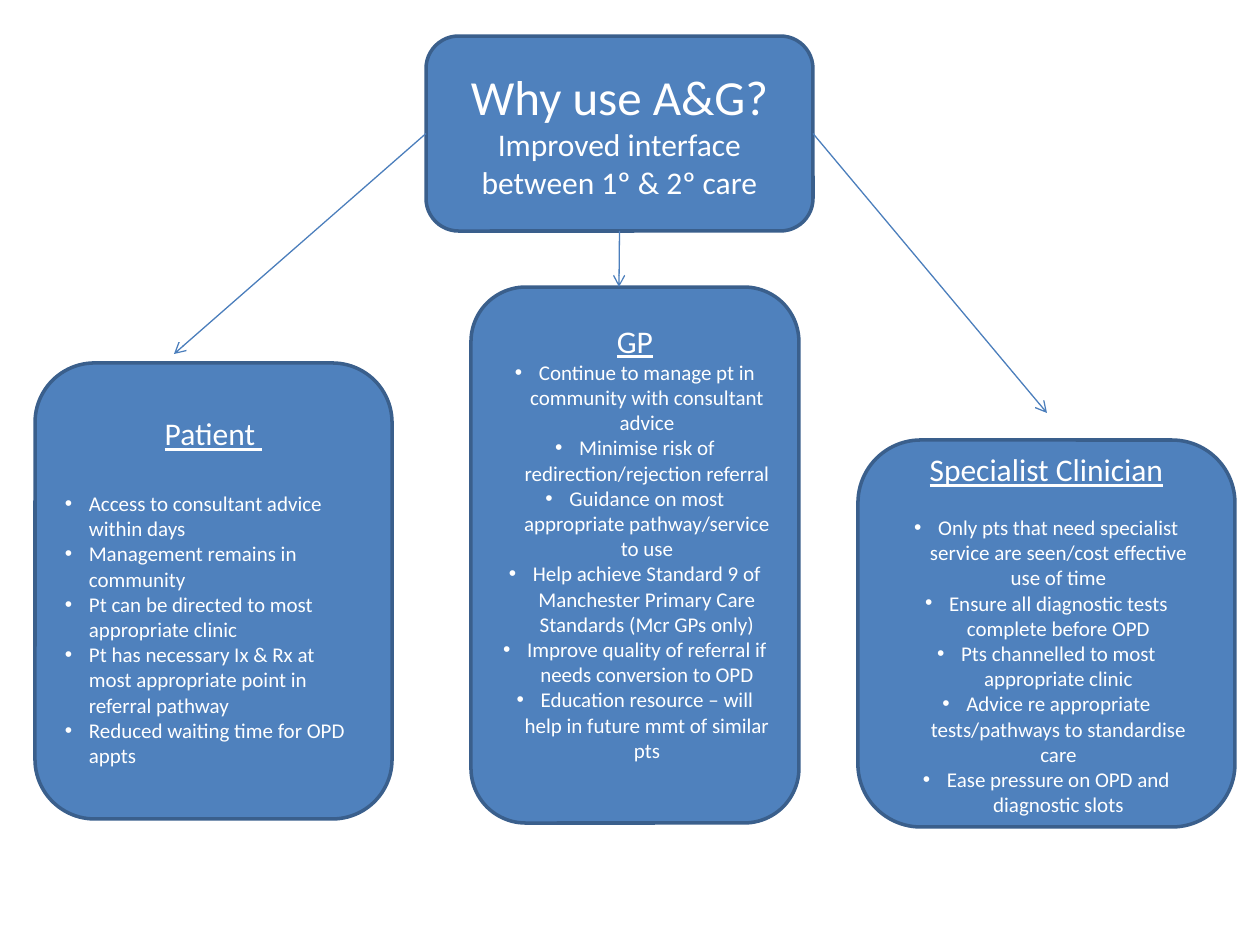
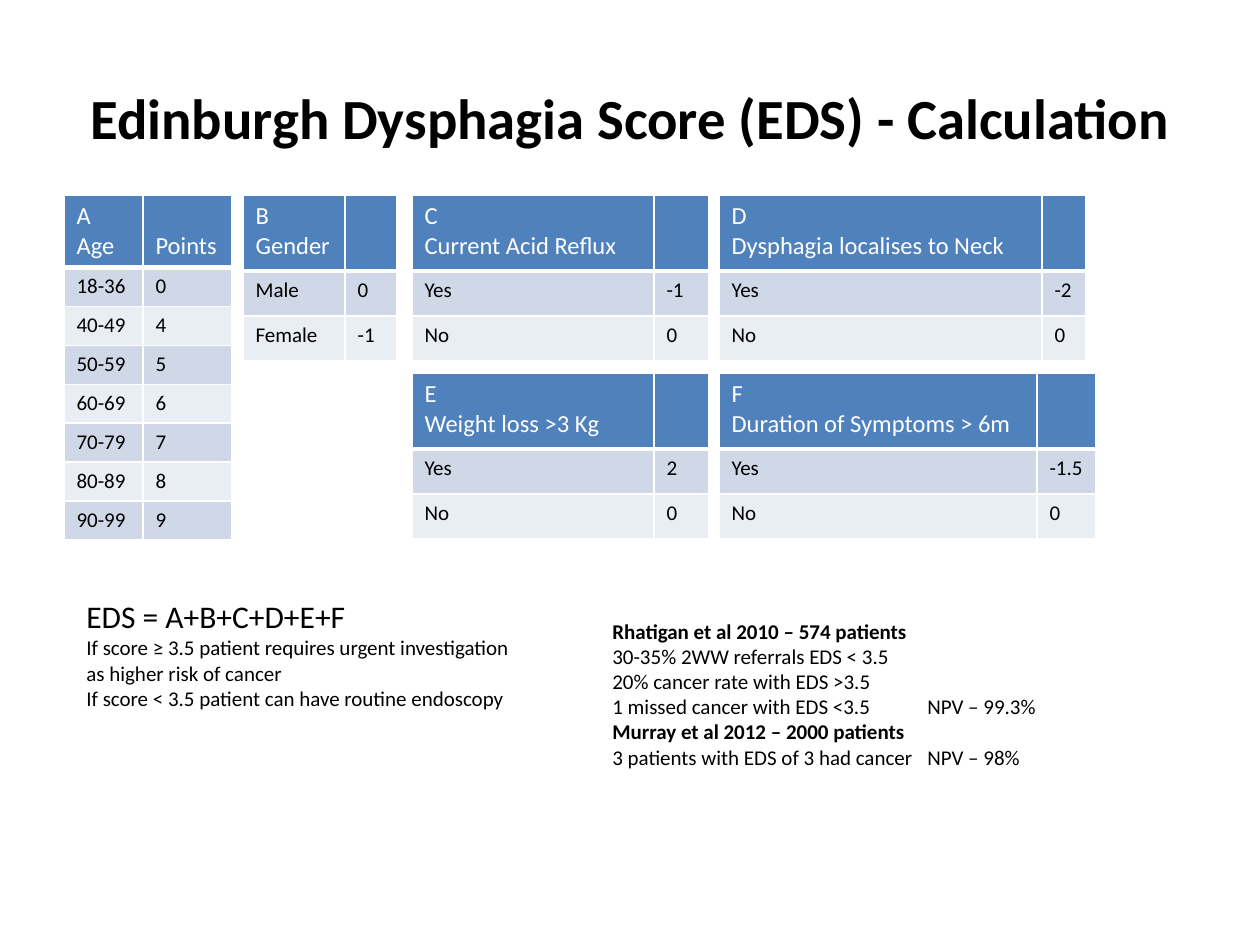
from pptx import Presentation
from pptx.dml.color import RGBColor
from pptx.enum.shapes import MSO_CONNECTOR as Connector, MSO_SHAPE as Shape
from pptx.enum.text import MSO_ANCHOR as Anchor, MSO_AUTO_SIZE as AutoSize, PP_ALIGN as Align
from pptx.oxml.ns import qn
from pptx.util import Emu, Pt
from lxml.etree import SubElement

FONT = "Calibri"
BLUE = RGBColor(0x4F, 0x81, 0xBD)
BOX_EDGE = RGBColor(0x3A, 0x5F, 0x8C)
ARROW_BLUE = RGBColor(0x4B, 0x7E, 0xBC)
BAND_DARK = RGBColor(0xD0, 0xD8, 0xE8)
BAND_LIGHT = RGBColor(0xE9, 0xED, 0xF4)
WHITE = RGBColor(0xFF, 0xFF, 0xFF)
BLACK = RGBColor(0, 0, 0)

PX_PER_INCH = 126
BULLET_INDENT = 24
INSET = 6
TITLE_BOX = (63, 38, 1134, 158)

# Reasons: box, heading, gap after heading (pt), alignment, extra bottom inset, bullets
REASONS = [
    ((35, 363, 357, 456), "Patient ", 22, Align.LEFT, 0, [
        "Access to consultant advice within days",
        "Management remains in community",
        "Pt can be directed to most appropriate clinic",
        "Pt has necessary Ix & Rx at most appropriate point in referral pathway",
        "Reduced waiting time for OPD appts",
    ]),
    ((471, 287, 328, 536), "GP", 0, Align.CENTER, 26, [
        "Continue to manage pt in community with consultant advice",
        "Minimise risk of redirection/rejection referral",
        "Guidance on most appropriate pathway/service to use",
        "Help achieve Standard 9 of Manchester Primary Care Standards (Mcr GPs only)",
        "Improve quality of referral if needs conversion to OPD",
        "Education resource – will help in future mmt of similar pts",
    ]),
    ((858, 440, 377, 387), "Specialist Clinician", 15, Align.CENTER, 0, [
        "Only pts that need specialist service are seen/cost effective use of time",
        "Ensure all diagnostic tests complete before OPD",
        "Pts channelled to most appropriate clinic",
        "Advice re appropriate tests/pathways to standardise care",
        "Ease pressure on OPD and diagnostic slots",
    ]),
]

# Arrows: connection site on the question box, end point
ARROWS = [(1, (174, 354)), (3, (1047, 413)), (2, (619, 287))]

AGE_BANDS = ["18-36", "40-49", "50-59", "60-69", "70-79", "80-89", "90-99"]
AGE_POINTS = ["0", "4", "5", "6", "7", "8", "9"]
TOP_ROW, LOWER_ROW = 195, 373

# Factors: left, top, column widths, header lines, answers with points
FACTORS = [
    (243, TOP_ROW, (102, 52), ["B", "Gender"], [("Male", "0"), ("Female", "-1")]),
    (412, TOP_ROW, (242, 55), ["C", "Current Acid Reflux"], [("Yes", "-1"), ("No", "0")]),
    (719, TOP_ROW, (323, 44), ["D", "Dysphagia localises to Neck"], [("Yes", "-2"), ("No", "0")]),
    (412, LOWER_ROW, (242, 55), ["E", "Weight loss >3 Kg"], [("Yes", "2"), ("No", "0")]),
    (719, LOWER_ROW, (318, 59), ["F", "Duration of Symptoms > 6m"], [("Yes", "-1.5"), ("No", "0")]),
]

# Notes: text, size, bold
SCORE_NOTES = [
    ("EDS = A+B+C+D+E+F", 18, False),
    ("If score ≥ 3.5 patient requires urgent investigation as higher risk of cancer", 12, False),
    ("If score < 3.5 patient can have routine endoscopy", 12, False),
]
EVIDENCE_NOTES = [
    ("Rhatigan et al 2010 – 574 patients", 12, True),
    ("30-35% 2WW referrals EDS < 3.5", 12, False),
    ("20% cancer rate with EDS >3.5", 12, False),
    ("1 missed cancer with EDS <3.5\tNPV – 99.3%", 12, False),
    ("Murray et al 2012 – 2000 patients", 12, True),
    ("3 patients with EDS of 3 had cancer\tNPV – 98%", 12, False),
]
NPV_TAB = 315


def px(length):
    return Emu(round(length * 914400 / PX_PER_INCH))


def px_box(box):
    return [px(length) for length in box]


def add_text(frame, text, size, color, bold=False, underline=False, align=Align.LEFT):
    """Fill the frame's first empty paragraph, or append a new one."""
    paragraph = frame.paragraphs[-1]
    if paragraph.runs:
        paragraph = frame.add_paragraph()
    paragraph.alignment = align
    run = paragraph.add_run()
    run.text = text
    font = run.font
    font.name, font.size, font.bold, font.underline = FONT, Pt(size), bold, underline
    font.color.rgb = color
    return paragraph


def make_bullet(paragraph):
    properties = paragraph._p.get_or_add_pPr()
    properties.set("marL", str(px(BULLET_INDENT)))
    properties.set("indent", str(-px(BULLET_INDENT)))
    SubElement(properties, qn("a:buFont"), typeface="Arial")
    SubElement(properties, qn("a:buChar"), char="•")


# Slide 1: reasons diagram
def add_round_box(slide, box):
    shape = slide.shapes.add_shape(Shape.ROUNDED_RECTANGLE, *px_box(box))
    shape.shadow.inherit = False
    shape.fill.solid()
    shape.fill.fore_color.rgb = BLUE
    shape.line.color.rgb = BOX_EDGE
    shape.line.width = Pt(2)
    shape.text_frame.word_wrap = True
    shape.text_frame.vertical_anchor = Anchor.MIDDLE
    return shape


def add_question(slide, box):
    shape = add_round_box(slide, box)
    for text, size in [("Why use A&G?", 28), ("Improved interface between 1º & 2º care", 18)]:
        add_text(shape.text_frame, text, size, WHITE, align=Align.CENTER)
    return shape


def add_reason(slide, box, heading, gap, align, extra_inset, bullets):
    frame = add_round_box(slide, box).text_frame
    frame.margin_bottom = px(INSET + extra_inset)
    title = add_text(frame, heading, 18, WHITE, underline=True, align=Align.CENTER)
    title.space_after = Pt(gap)
    for bullet in bullets:
        make_bullet(add_text(frame, bullet, 12, WHITE, align=align))


def add_arrow(slide, source, site, end):
    connector = slide.shapes.add_connector(Connector.STRAIGHT, 0, 0, *px_box(end))
    connector.begin_connect(source, site)
    connector.line.color.rgb = ARROW_BLUE
    connector.line.width = Pt(0.75)
    SubElement(connector.line._get_or_add_ln(), qn("a:tailEnd"), type="arrow")
    SubElement(connector._element.spPr, qn("a:effectLst"))


def build_reasons_slide(presentation):
    slide = presentation.slides.add_slide(presentation.slide_layouts[6])
    for reason in REASONS:
        add_reason(slide, *reason)
    question = add_question(slide, (426, 36, 387, 195))
    for site, end in ARROWS:
        add_arrow(slide, question, site, end)


# Slide 2: score calculation
def add_title(slide, text):
    title = slide.shapes.title
    title.left, title.top, title.width, title.height = px_box(TITLE_BOX)
    frame = title.text_frame
    frame.auto_size = AutoSize.NONE
    frame.vertical_anchor = Anchor.MIDDLE
    add_text(frame, text, 32.4, BLACK, bold=True, align=Align.CENTER)


def style_cell(cell, fill, bottom_width):
    properties = cell._tc.get_or_add_tcPr()
    for side, width in [("L", 1), ("R", 1), ("T", 1), ("B", bottom_width)]:
        line = SubElement(properties, qn(f"a:ln{side}"), w=str(Pt(width)))
        color = SubElement(SubElement(line, qn("a:solidFill")), qn("a:srgbClr"))
        color.set("val", str(WHITE))
    cell.fill.solid()
    cell.fill.fore_color.rgb = fill


def add_score_table(slide, left, top, widths, header, answers,
                    points_header="", header_height=76, row_height=45):
    height = header_height + row_height * len(answers)
    frame = slide.shapes.add_table(len(answers) + 1, len(widths),
                                   *px_box((left, top, sum(widths), height)))
    table = frame.table
    for column, width in zip(table.columns, widths):
        column.width = px(width)
    for index, row in enumerate(table.rows):
        row.height = px(row_height if index else header_height)

    # Header
    for cell in table.rows[0].cells:
        style_cell(cell, BLUE, 3)
    for line in header:
        add_text(table.cell(0, 0).text_frame, line, 14, WHITE)
    if points_header:
        table.cell(0, 1).vertical_anchor = Anchor.BOTTOM
        add_text(table.cell(0, 1).text_frame, points_header, 14, WHITE)

    # Banded answers
    for row, values in enumerate(answers, start=1):
        for column, value in enumerate(values):
            cell = table.cell(row, column)
            style_cell(cell, BAND_DARK if row % 2 else BAND_LIGHT, 1)
            add_text(cell.text_frame, value, 12, BLACK)


def add_notes(slide, box, notes):
    frame = slide.shapes.add_textbox(*px_box(box)).text_frame
    frame.word_wrap = True
    for text, size, bold in notes:
        paragraph = add_text(frame, text, size, BLACK, bold=bold)
        if "\t" in text:
            tabs = SubElement(paragraph._p.get_or_add_pPr(), qn("a:tabLst"))
            SubElement(tabs, qn("a:tab"), pos=str(px(NPV_TAB)), algn="l")


def build_score_slide(presentation):
    slide = presentation.slides.add_slide(presentation.slide_layouts[5])
    add_title(slide, "Edinburgh Dysphagia Score (EDS) - Calculation")
    add_score_table(slide, 64, TOP_ROW, (79, 89), ["A", "Age"],
                    list(zip(AGE_BANDS, AGE_POINTS)),
                    points_header="Points", header_height=72, row_height=39)
    for factor in FACTORS:
        add_score_table(slide, *factor)
    add_notes(slide, (74, 591, 466, 165), SCORE_NOTES)
    add_notes(slide, (600, 612, 517, 229), EVIDENCE_NOTES)


def main():
    presentation = Presentation()
    presentation.slide_width, presentation.slide_height = px(1260), px(945)
    build_reasons_slide(presentation)
    build_score_slide(presentation)
    presentation.save("out.pptx")


if __name__ == "__main__":
    main()
